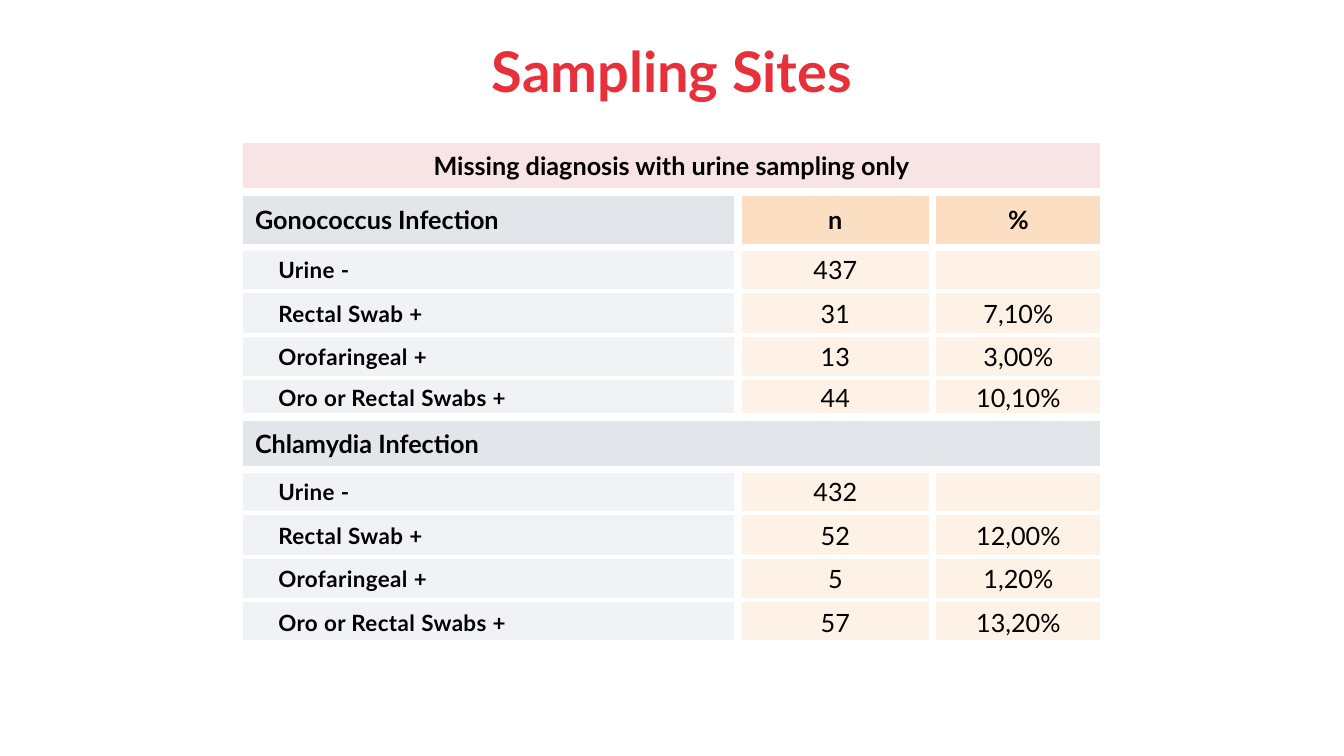
from lxml import etree
from pptx import Presentation
from pptx.dml.color import RGBColor
from pptx.enum.text import MSO_ANCHOR, PP_ALIGN
from pptx.oxml.ns import qn
from pptx.util import Inches, Pt

MIDDLE = MSO_ANCHOR.MIDDLE
LEFT, CENTER = PP_ALIGN.LEFT, PP_ALIGN.CENTER

FONT = "Lato"
RED = RGBColor(0xE8, 0x30, 0x3B)
BLACK = RGBColor(0x00, 0x00, 0x00)
WHITE = RGBColor(0xFF, 0xFF, 0xFF)
PINK = RGBColor(0xF8, 0xE4, 0xE4)
GREY = RGBColor(0xE2, 0xE6, 0xEA)
LIGHT_GREY = RGBColor(0xF1, 0xF2, 0xF5)
ORANGE = RGBColor(0xFC, 0xDE, 0xC2)
LIGHT_ORANGE = RGBColor(0xFE, 0xF1, 0xE6)

THICK, THIN = Pt(6), Pt(3)
COLUMN_SHARES = (4.95, 1.93, 1.7)
ROW_SHARES = (0.52, 0.55, 0.43, 0.43, 0.43, 0.38, 0.52, 0.43, 0.43, 0.43, 0.43)

CAPTION = "Missing diagnosis with urine sampling only"
SAMPLES = ("Urine -", "Rectal Swab +", "Orofaringeal +", "Oro or Rectal Swabs +")
INFECTIONS = (
    (("Gonococcus Infection", "n", "%"),
     (("437", ""), ("31", "7,10%"), ("13", "3,00%"), ("44", "10,10%"))),
    (("Chlamydia Infection", "", ""),
     (("432", ""), ("52", "12,00%"), ("5", "1,20%"), ("57", "13,20%"))),
)


def add_title(slide, text, left, top, width, height):
    title = slide.shapes.title
    title.left, title.top = Inches(left), Inches(top)
    title.width, title.height = Inches(width), Inches(height)
    title.text_frame.text = text
    title.text_frame.vertical_anchor = MIDDLE
    paragraph = title.text_frame.paragraphs[0]
    paragraph.alignment = CENTER
    font = paragraph.font
    font.name, font.size, font.bold = FONT, Pt(40), True
    font.color.rgb = RED


def set_borders(cell, top, bottom):
    """Draw white borders; the side borders are always thick."""
    properties = cell._tc.get_or_add_tcPr()
    for side, width in (("L", THICK), ("R", THICK), ("T", top), ("B", bottom)):
        line = etree.SubElement(properties, qn(f"a:ln{side}"), w=str(width))
        fill = etree.SubElement(line, qn("a:solidFill"))
        etree.SubElement(fill, qn("a:srgbClr"), val=str(WHITE))


def fill_cell(cell, text, color, top=THICK, bottom=THICK, indent=None,
              size=18, bold=True, spacing=0):
    """Format one cell; text is centred unless a left indent is given."""
    set_borders(cell, top, bottom)
    cell.fill.solid()
    cell.fill.fore_color.rgb = color
    cell.vertical_anchor = MIDDLE
    cell.margin_left = Inches(indent or 0.01)
    cell.margin_right = Inches(0.16 if indent else 0.01)
    cell.margin_top, cell.margin_bottom = Inches(0.01), 0
    paragraph = cell.text_frame.paragraphs[0]
    paragraph.alignment = LEFT if indent else CENTER
    font = paragraph.font
    font.name, font.size, font.bold = FONT, Pt(size), bold
    font.color.rgb = BLACK
    if text:
        run = paragraph.add_run()
        run.text = text
        if spacing:
            run._r.get_or_add_rPr().set("spc", str(spacing))


def fill_infection(table, first_row, heading, results):
    """Fill a heading row and one row per kind of sample."""
    name, *measures = heading
    has_measures = any(measures)
    fill_cell(table.cell(first_row, 0), name, GREY, indent=0.16)
    for column, measure in enumerate(measures, 1):
        fill_cell(table.cell(first_row, column), measure,
                  ORANGE if has_measures else GREY)
    if not has_measures:
        table.cell(first_row, 0).merge(table.cell(first_row, 2))

    for index, (sample, values) in enumerate(zip(SAMPLES, results)):
        row = first_row + 1 + index
        top = THICK if index == 0 else THIN
        bottom = THICK if index == len(SAMPLES) - 1 else THIN
        fill_cell(table.cell(row, 0), sample, LIGHT_GREY, top, bottom,
                  indent=0.39, size=16, spacing=30)
        for column, value in enumerate(values, 1):
            fill_cell(table.cell(row, column), value, LIGHT_ORANGE, top, bottom,
                      bold=False)


def add_diagnosis_table(slide, left, top, width, height):
    table = slide.shapes.add_table(
        len(ROW_SHARES), len(COLUMN_SHARES),
        Inches(left), Inches(top), Inches(width), Inches(height)).table
    table.first_row = table.horz_banding = False
    for column, share in zip(table.columns, COLUMN_SHARES):
        column.width = Inches(width * share / sum(COLUMN_SHARES))
    for row, share in zip(table.rows, ROW_SHARES):
        row.height = Inches(height * share / sum(ROW_SHARES))

    for column, text in enumerate((CAPTION, "", "")):
        fill_cell(table.cell(0, column), text, PINK)
    table.cell(0, 0).merge(table.cell(0, 2))
    for index, (heading, results) in enumerate(INFECTIONS):
        fill_infection(table, 1 + index * (len(SAMPLES) + 1), heading, results)


def main():
    presentation = Presentation()
    presentation.slide_width = Inches(13.33)
    presentation.slide_height = Inches(7.5)
    slide = presentation.slides.add_slide(presentation.slide_layouts[5])
    add_title(slide, "Sampling Sites", 0.82, 0.25, 11.69, 0.9)
    add_diagnosis_table(slide, 2.37, 1.38, 8.58, 5.01)
    presentation.save("out.pptx")


if __name__ == "__main__":
    main()
